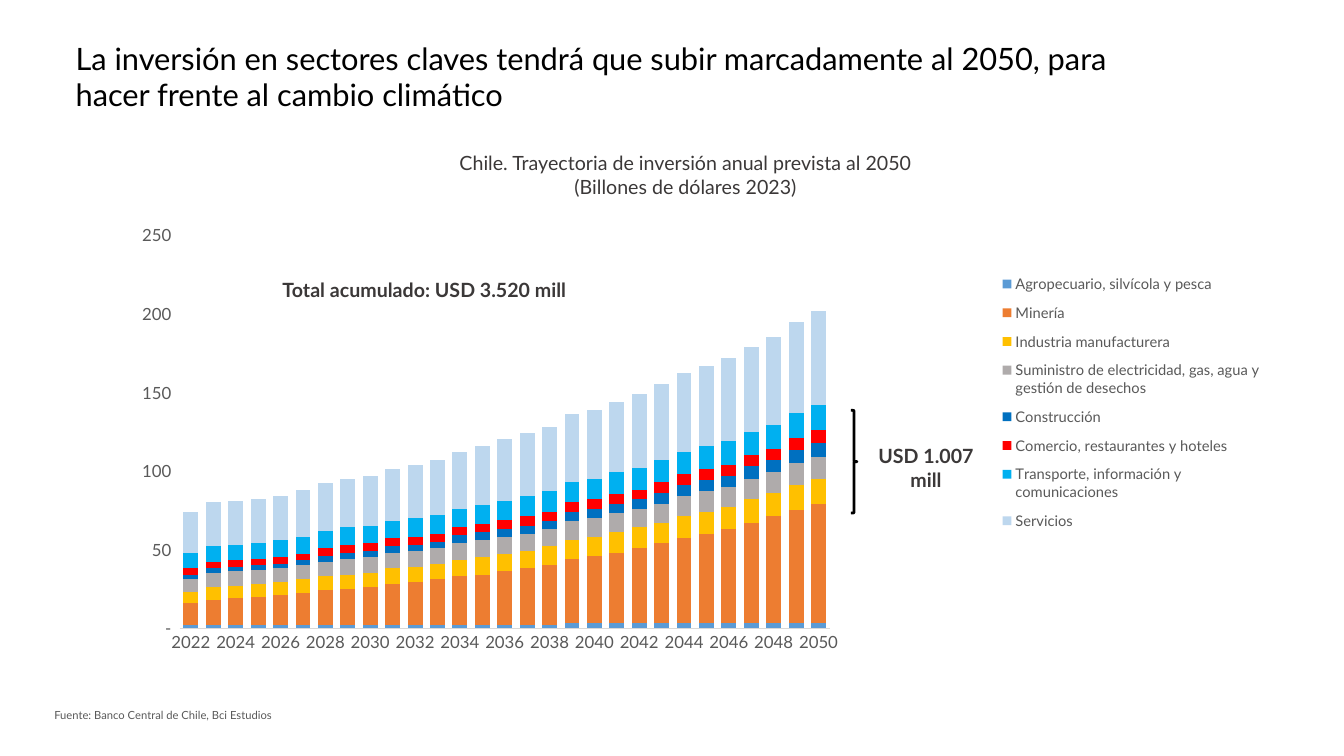
from lxml import etree
from pptx import Presentation
from pptx.chart.data import CategoryChartData
from pptx.dml.color import RGBColor
from pptx.enum.chart import XL_CHART_TYPE, XL_LEGEND_POSITION, XL_TICK_MARK
from pptx.enum.shapes import MSO_SHAPE
from pptx.enum.text import PP_ALIGN
from pptx.oxml.ns import qn
from pptx.util import Inches, Pt

FONT = "Lato"
COLORS = {"title": "000000", "note": "3B3838", "label": "595959",
          "axis": "D9D9D9", "brace": "000000"}

TITLE = ("La inversión en sectores claves tendrá que subir marcadamente al 2050, "
         "para hacer frente al cambio climático")
CHART_TITLE = ["Chile. Trayectoria de inversión anual prevista al 2050",
               "(Billones de dólares 2023)"]
TOTAL = "Total acumulado: USD 3.520 mill"
BRACE_TOTAL = "USD 1.007 mill"
SOURCE = "Fuente: Banco Central de Chile, Bci Estudios"

YEARS = range(2022, 2051)
SECTORS = [
    ("Agropecuario, silvícola y pesca", "5B9BD5",
     [2, 2, 2, 2, 2, 2, 2, 2, 2, 2, 2, 2, 2, 2, 2,
      2, 2, 3, 3, 3, 3, 3, 3, 3, 3, 3, 3, 3, 3]),
    ("Minería", "ED7D31",
     [14, 16, 17, 18, 19, 20, 22, 23, 24, 26, 27, 29, 31, 32, 34,
      36, 38, 41, 43, 45, 48, 51, 54, 57, 60, 64, 68, 72, 76]),
    ("Industria manufacturera", "FFC000",
     [7, 8, 8, 8, 8, 9, 9, 9, 9, 10, 10, 10, 10, 11, 11,
      11, 12, 12, 12, 13, 13, 13, 14, 14, 14, 15, 15, 16, 16]),
    ("Suministro de electricidad, gas, agua y gestión de desechos", "AFABAB",
     [8, 9, 9, 9, 9, 9, 9, 10, 10, 10, 10, 10, 11, 11, 11,
      11, 11, 12, 12, 12, 12, 12, 13, 13, 13, 13, 13, 14, 14]),
    ("Construcción", "0070C0",
     [3, 3, 3, 3, 3, 3, 4, 4, 4, 4, 4, 4, 5, 5, 5,
      5, 5, 6, 6, 6, 6, 7, 7, 7, 7, 8, 8, 8, 9]),
    ("Comercio, restaurantes y hoteles", "FF0000",
     [4, 4, 4, 4, 4, 4, 5, 5, 5, 5, 5, 5, 5, 5, 6,
      6, 6, 6, 6, 6, 6, 7, 7, 7, 7, 7, 7, 8, 8]),
    ("Transporte, información y comunicaciones", "00B0F0",
     [10, 10, 10, 10, 11, 11, 11, 11, 11, 11, 12, 12, 12, 12, 12,
      13, 13, 13, 13, 14, 14, 14, 14, 15, 15, 15, 15, 16, 16]),
    ("Servicios", "BDD7EE",
     [26, 28, 28, 28, 28, 30, 30, 31, 32, 33, 34, 35, 36, 38, 39,
      40, 41, 43, 44, 45, 47, 48, 50, 51, 53, 54, 56, 58, 60]),
]
NUMBER_FORMAT = r'_(* #,##0_);_(* \(#,##0\);_(* "-"_);_(@_)'


def color(name):
    return RGBColor.from_string(COLORS[name])


def set_font(font, size, ink, bold=False):
    font.name, font.size, font.bold = FONT, Pt(size), bold
    font.color.rgb = color(ink)


def add_text(slide, lines, at, size=14, ink="note", bold=False,
             align=PP_ALIGN.CENTER, wrap=True, inset=None):
    frame = slide.shapes.add_textbox(*map(Inches, at)).text_frame
    frame.word_wrap = wrap
    if inset is not None:
        frame.margin_left = frame.margin_right = Inches(inset)
        frame.margin_top = frame.margin_bottom = Inches(inset)
    for i, line in enumerate(lines):
        paragraph = frame.paragraphs[0] if i == 0 else frame.add_paragraph()
        paragraph.alignment = align
        run = paragraph.add_run()
        run.text = line
        set_font(run.font, size, ink, bold)


def place(part, index, box, inner=False):
    """Give a chart part a fixed box, as fractions of the chart."""
    for old in part.findall(qn("c:layout")):
        part.remove(old)
    layout = etree.Element(qn("c:layout"))
    manual = etree.SubElement(layout, qn("c:manualLayout"))
    settings = [("layoutTarget", "inner")] if inner else []
    settings += [("xMode", "edge"), ("yMode", "edge"), *zip("xywh", box)]
    for tag, value in settings:
        etree.SubElement(manual, qn(f"c:{tag}")).set("val", str(value))
    part.insert(index, layout)


def add_investment_chart(slide, at):
    data = CategoryChartData(number_format="0")
    data.categories = [str(year) if year % 2 == 0 else "" for year in YEARS]
    for name, _, values in SECTORS:
        data.add_series(name, values)
    chart = slide.shapes.add_chart(
        XL_CHART_TYPE.COLUMN_STACKED, *map(Inches, at), data).chart
    chart.has_title = False
    set_font(chart.font, 12, "title")

    plot = chart.plots[0]
    plot.gap_width, plot.overlap, plot.vary_by_categories = 50, 100, False
    for series, (_, fill, _) in zip(plot.series, SECTORS):
        series.format.fill.solid()
        series.format.fill.fore_color.rgb = RGBColor.from_string(fill)

    years, amounts = chart.category_axis, chart.value_axis
    for axis in (years, amounts):
        axis.major_tick_mark = axis.minor_tick_mark = XL_TICK_MARK.NONE
        axis.has_major_gridlines = False
        set_font(axis.tick_labels.font, 12, "label")
    years.format.line.color.rgb = color("axis")
    years.format.line.width = Pt(0.75)
    amounts.format.line.fill.background()
    amounts.minimum_scale, amounts.maximum_scale, amounts.major_unit = 0, 250, 50
    amounts.tick_labels.number_format = NUMBER_FORMAT
    amounts.tick_labels.number_format_is_linked = False

    chart.has_legend = True
    legend = chart.legend
    legend.position = XL_LEGEND_POSITION.BOTTOM
    legend.include_in_layout = False
    set_font(legend.font, 10.5, "label")
    plot_area = chart.element.find(".//" + qn("c:plotArea"))
    place(plot_area, 0, (0.067, 0.027, 0.552, 0.853), inner=True)
    place(chart.element.find(".//" + qn("c:legend")), 1, (0.76, 0.09, 0.23, 0.6))


def add_brace(slide, at):
    brace = slide.shapes.add_shape(MSO_SHAPE.RIGHT_BRACE, *map(Inches, at))
    brace.shadow.inherit = False
    brace.fill.background()
    brace.line.color.rgb = color("brace")
    brace.line.width = Pt(2)


def main():
    deck = Presentation()
    deck.slide_width, deck.slide_height = Inches(13.33), Inches(7.5)
    slide = deck.slides.add_slide(deck.slide_layouts[6])
    add_text(slide, [TITLE], (0.7, 0.34, 10.75, 0.84), size=22, ink="title",
             align=PP_ALIGN.LEFT, inset=0.05)
    add_investment_chart(slide, (1, 2.21, 11.68, 4.57))
    add_brace(slide, (8.44, 4.07, 0.06, 1.02))
    add_text(slide, [BRACE_TOTAL], (8.53, 4.36, 1.31, 0.57), bold=True)
    add_text(slide, [TOTAL], (2.32, 2.71, 3.78, 0.34), bold=True)
    add_text(slide, CHART_TITLE, (4.06, 1.45, 5.48, 0.57))
    add_text(slide, [SOURCE], (0.44, 6.98, 2.44, 0.24), size=8, ink="label",
             align=PP_ALIGN.LEFT, wrap=False)
    deck.save("out.pptx")


if __name__ == "__main__":
    main()
